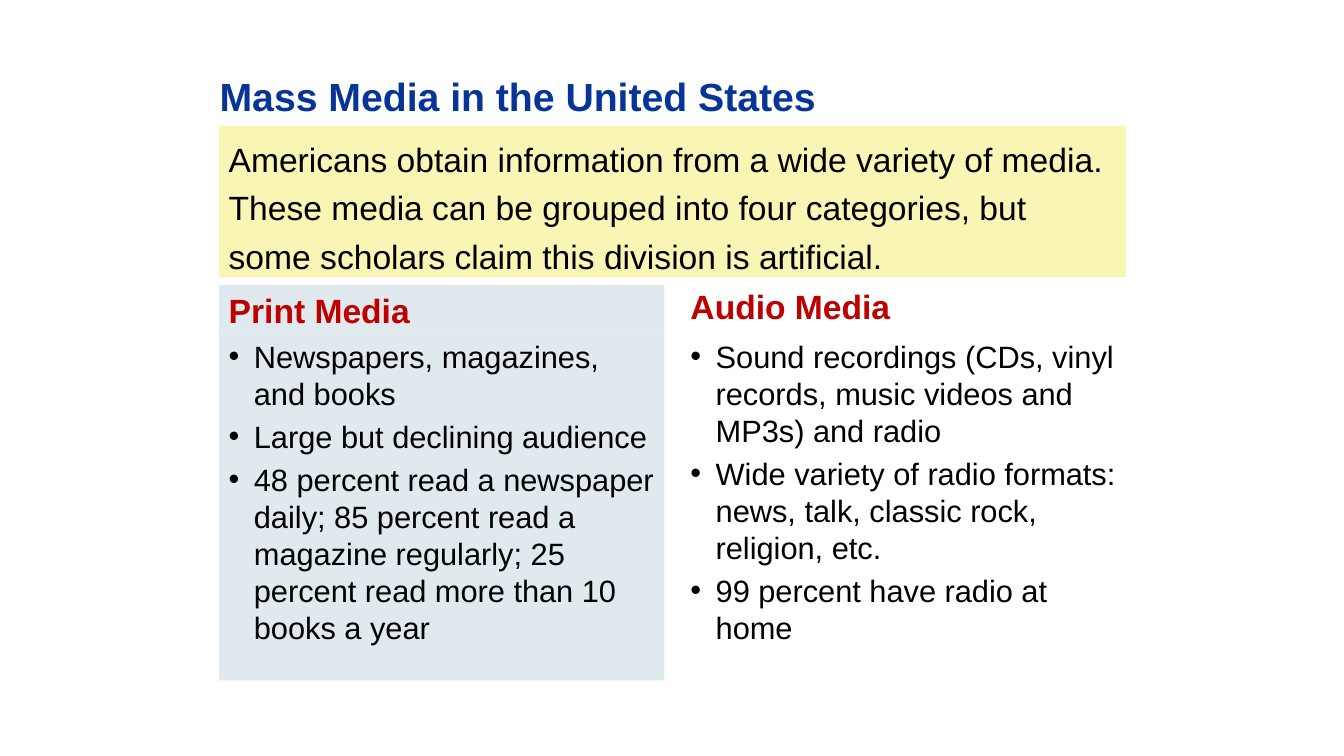
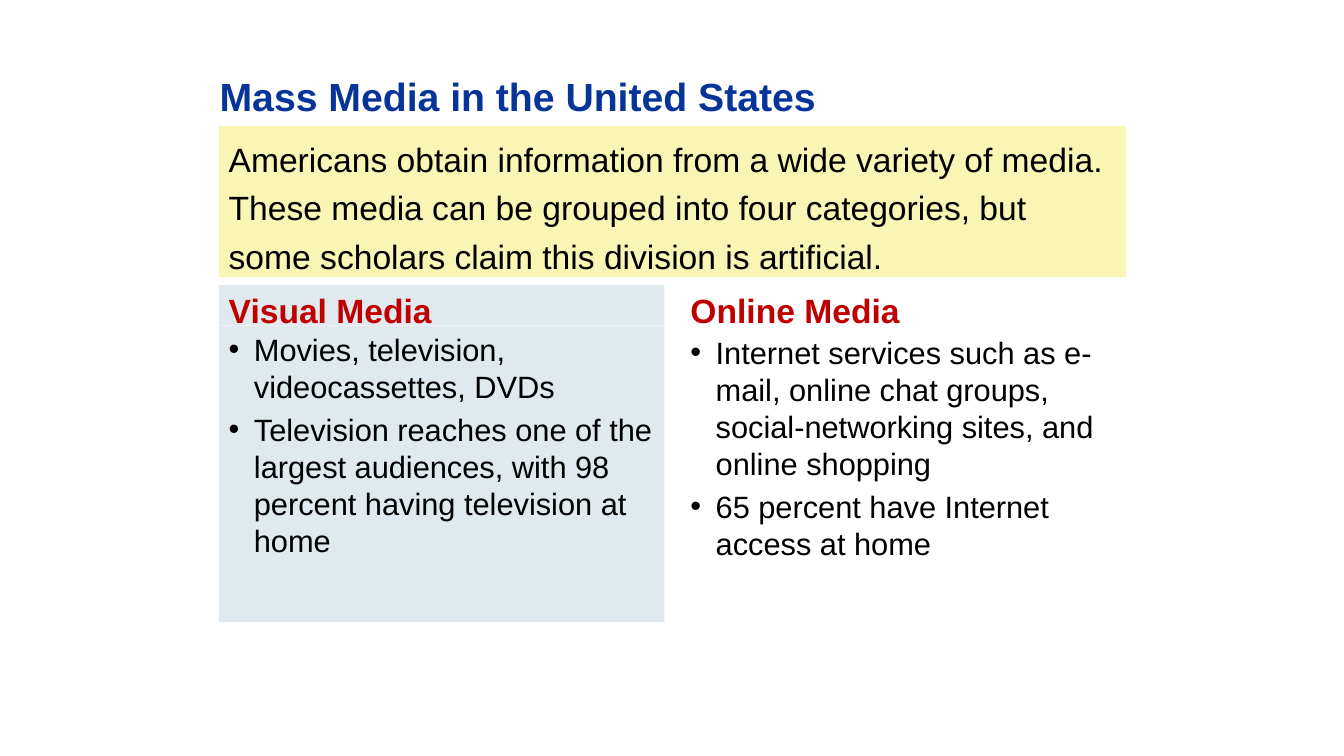
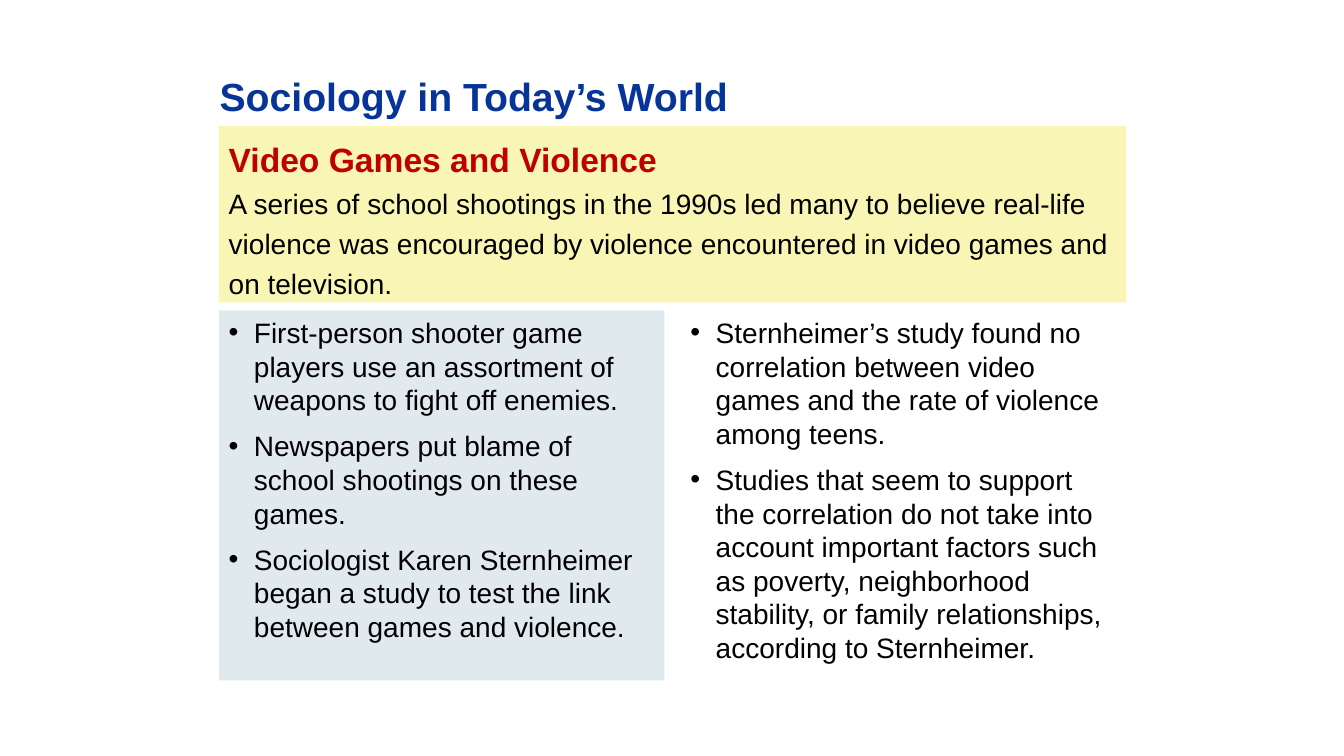
from pptx import Presentation
from pptx.dml.color import RGBColor
from pptx.enum.shapes import MSO_SHAPE
from pptx.enum.text import MSO_ANCHOR, PP_ALIGN
from pptx.oxml.ns import qn
from pptx.util import Inches, Pt
from lxml.etree import SubElement

NAVY = RGBColor(0x07, 0x34, 0x99)
RED = RGBColor(0xBF, 0x00, 0x00)
BLACK = RGBColor(0x00, 0x00, 0x00)
WHITE = RGBColor(0xFF, 0xFF, 0xFF)
CREAM = RGBColor(0xF9, 0xF5, 0xB4)
MIST = RGBColor(0xE0, 0xE9, 0xED)

FONT = "Arial"
LEFT, TOP, WIDTH = 2.17, 1.25, 9
COLUMN_WIDTH = 4.42
COLUMN_LEFTS = (LEFT, LEFT + WIDTH - COLUMN_WIDTH)
COLUMN_FILLS = (MIST, WHITE)

MEDIA_TITLE = "Mass Media in the United States"
MEDIA_INTRO = (
    "Americans obtain information from a wide variety of media. These media can be "
    "grouped into four categories, but some scholars claim this division is artificial."
)

SLIDES = [
    {
        "title": MEDIA_TITLE, "intro": MEDIA_INTRO, "intro_height": 1.5, "size": 22,
        "columns": [
            {"heading": "Print Media", "top": 2.83, "body_top": 3.3, "bottom": 6.75, "bullets": [
                "Newspapers, magazines, and books",
                "Large but declining audience",
                "48 percent read a newspaper daily; 85 percent read a magazine regularly; "
                "25 percent read more than 10 books a year",
            ]},
            {"heading": "Audio Media", "top": 2.79, "body_top": 3.3, "bottom": 6.75, "bullets": [
                "Sound recordings (CDs, vinyl records, music videos and MP3s) and radio",
                "Wide variety of radio formats: news, talk, classic rock, religion, etc.",
                "99 percent have radio at home",
            ]},
        ],
    },
    {
        "title": MEDIA_TITLE, "intro": MEDIA_INTRO, "intro_height": 1.5, "size": 22,
        "columns": [
            {"heading": "Visual Media", "top": 2.83, "body_top": 3.23, "bottom": 6.17, "bullets": [
                "Movies, television, videocassettes, DVDs",
                "Television reaches one of the largest audiences, with 98 percent having "
                "television at home",
            ]},
            {"heading": "Online Media", "top": 2.83, "body_top": 3.26, "bottom": 6.16, "bullets": [
                "Internet services such as e-mail, online chat groups, social-networking "
                "sites, and online shopping",
                "65 percent have Internet access at home",
            ]},
        ],
    },
    {
        "title": "Sociology in Today’s World", "intro_heading": "Video Games and Violence",
        "intro": "A series of school shootings in the 1990s led many to believe real-life "
                 "violence was encouraged by violence encountered in video games and on television.",
        "intro_height": 1.75, "size": 20, "space_after": 5,
        "columns": [
            {"body_top": 3.08, "bottom": 6.75, "bullets": [
                "First-person shooter game players use an assortment of weapons to fight off enemies.",
                "Newspapers put blame of school shootings on these games.",
                "Sociologist Karen Sternheimer began a study to test the link between games and violence.",
            ]},
            {"body_top": 3.08, "bottom": 6.75, "bullets": [
                "Sternheimer’s study found no correlation between video games and the rate "
                "of violence among teens.",
                "Studies that seem to support the correlation do not take into account important "
                "factors such as poverty, neighborhood stability, or family relationships, "
                "according to Sternheimer.",
            ]},
        ],
    },
]


def add_panel(slide, left, top, width, height, fill):
    panel = slide.shapes.add_shape(
        MSO_SHAPE.RECTANGLE, Inches(left), Inches(top), Inches(width), Inches(height))
    panel.shadow.inherit = False
    panel.fill.solid()
    panel.fill.fore_color.rgb = fill
    panel.line.fill.background()
    return prepare(panel.text_frame)


def prepare(frame):
    frame.word_wrap = True
    frame.vertical_anchor = MSO_ANCHOR.TOP
    return frame


def style(paragraph, size, color=BLACK, bold=False, before=0, after=0, spacing=None):
    paragraph.alignment = PP_ALIGN.LEFT
    paragraph.space_before = Pt(before)
    paragraph.space_after = Pt(after)
    paragraph.line_spacing = spacing
    for run in paragraph.runs:
        run.font.name = FONT
        run.font.size = Pt(size)
        run.font.bold = bold
        run.font.color.rgb = color


def add_bullet(paragraph):
    properties = paragraph._p.get_or_add_pPr()
    properties.set("marL", str(Inches(0.25)))
    properties.set("indent", str(-Inches(0.25)))
    SubElement(properties, qn("a:buFont")).set("typeface", FONT)
    SubElement(properties, qn("a:buChar")).set("char", "•")


def add_title(slide, title):
    box = slide.shapes.add_textbox(Inches(2.08), Inches(0.67), Inches(8.92), Inches(0.58))
    frame = prepare(box.text_frame)
    frame.text = title
    style(frame.paragraphs[0], 28, NAVY, bold=True)


def add_intro(slide, content):
    frame = add_panel(slide, LEFT, TOP, WIDTH, content["intro_height"], CREAM)
    if "intro_heading" in content:
        frame.text = content["intro_heading"] + "\n" + content["intro"]
        heading, intro = frame.paragraphs
        style(heading, 24, RED, bold=True, before=4.8, spacing=1.2)
        style(intro, 20, spacing=1.2)
    else:
        frame.text = content["intro"]
        style(frame.paragraphs[0], 24, before=4.8, spacing=1.2)


def add_column(slide, column, left, fill, size, space_after):
    body_top = column["body_top"]
    body = add_panel(slide, left, body_top, COLUMN_WIDTH, column["bottom"] - body_top, fill)
    body.text = "\n".join(column["bullets"])
    for paragraph in body.paragraphs:
        style(paragraph, size, before=0.2 * size, after=space_after)
        add_bullet(paragraph)
    if "heading" in column:
        top = column["top"]
        heading = add_panel(slide, left, top, COLUMN_WIDTH, body_top - top, fill)
        heading.text = column["heading"]
        style(heading.paragraphs[0], 24, RED, bold=True)


def main():
    deck = Presentation()
    deck.slide_width, deck.slide_height = Inches(13.33), Inches(7.5)
    for content in SLIDES:
        slide = deck.slides.add_slide(deck.slide_layouts[6])
        add_intro(slide, content)
        add_title(slide, content["title"])
        for column, left, fill in zip(content["columns"], COLUMN_LEFTS, COLUMN_FILLS):
            add_column(slide, column, left, fill, content["size"], content.get("space_after", 0))
    deck.save("out.pptx")


if __name__ == "__main__":
    main()
